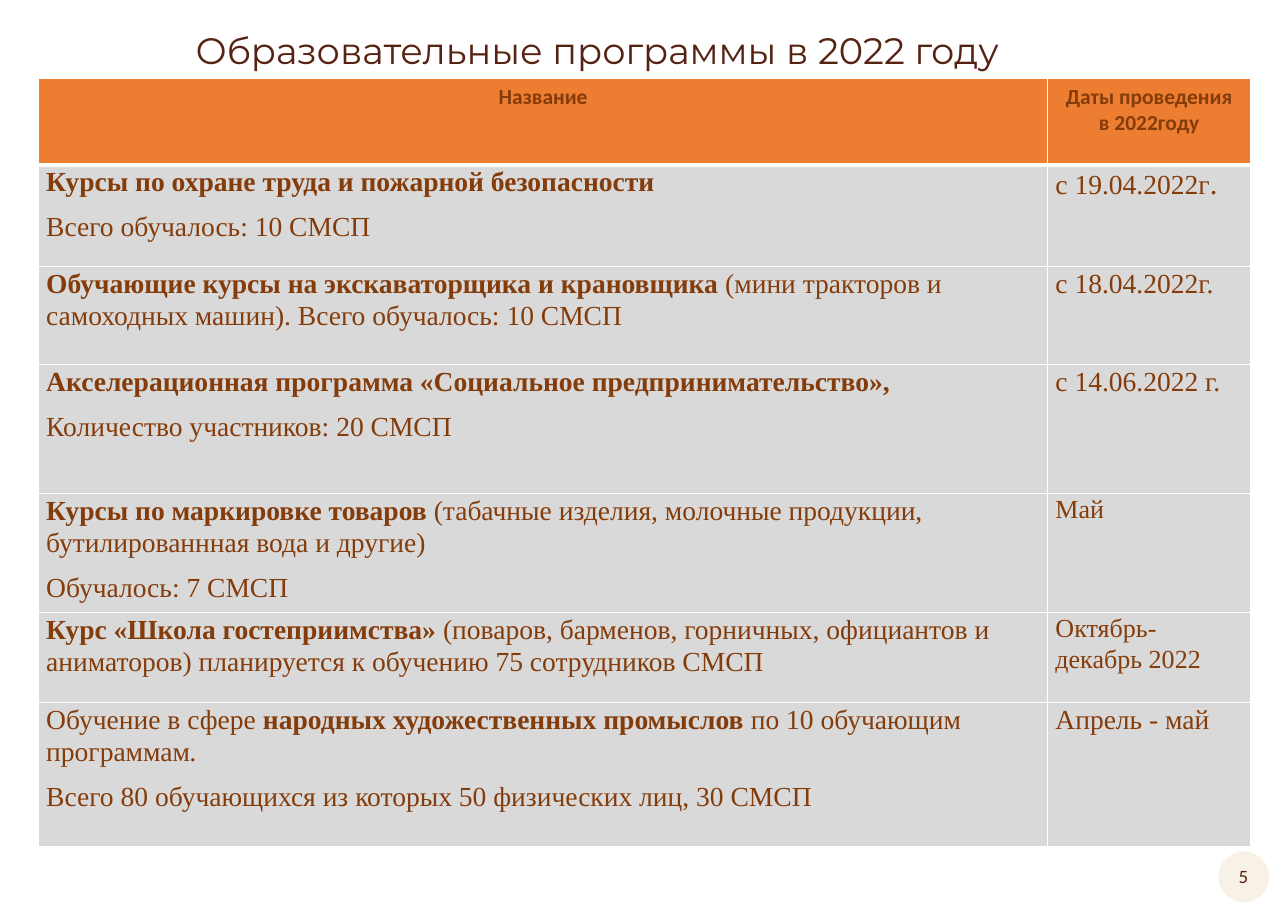
from pptx import Presentation, util as u
from pptx.dml.color import RGBColor
from pptx.enum import shapes, text
from pptx.oxml import parse_xml
from pptx.oxml.ns import nsdecls

WIDE, HIGH = 11.69, 8.27
INK = {"page": "FFFFFF", "head": "ED7D31", "body": "D9D9D9",
       "text": "843C0B", "title": "562212", "badge": "F7F2E5"}
SERIF, SANS = "Times New Roman", "Calibri"
TITLE = "Образовательные программы в 2022 году"
PAGE = "5"
HEAD = [["Название"], ["Даты проведения", "в 2022году"]]
COURSES = [
    ([[("Курсы по охране труда и пожарной безопасности", "b")],
      [("Всего обучалось: 10 СМСП", "")]],
     [("с 19.04.2022г", 18), (".", 20)]),
    ([[("Обучающие курсы на экскаваторщика и крановщика ", "b"),
       ("(мини тракторов и самоходных машин). Всего обучалось: 10 СМСП", "")]],
     [("с 18.04.2022г.", 18)]),
    ([[("Акселерационная программа «Социальное предпринимательство»,", "b")],
      [("Количество участников: 20 СМСП", "")]],
     [("с 14.06.2022 г.", 18)]),
    ([[("Курсы по маркировке товаров ", "b"),
       ("(табачные изделия, молочные продукции, бутилированнная вода и другие)", "")],
      [("Обучалось: 7 СМСП", "")]],
     [("Май", 17)]),
    ([[("Курс «Школа гостеприимства» ", "b"),
       ("(поваров, барменов, горничных, официантов и аниматоров) "
        "планируется к обучению 75 сотрудников СМСП", "")]],
     [("Октябрь-декабрь 2022", 17)]),
    ([[("Обучение в сфере ", ""), ("народных художественных промыслов ", "b"),
       ("по 10 обучающим программам", ""), (".", "i")],
      [("Всего 80 обучающихся из которых 50 физических лиц, 30 СМСП", "")]],
     [("Апрель - май", 18)]),
]
COLS = [9.16, 1.84]
ROWS = [0.79, 0.92, 0.89, 1.17, 1.08, 0.82, 1.31]


def tint(fill, key):
    fill.solid()
    fill.fore_color.rgb = RGBColor.from_string(INK[key])


def add_run(para, words, size, face, key, style=""):
    run = para.add_run()
    run.text = words
    font = run.font
    font.size, font.name = u.Pt(size), face
    font.bold, font.italic = "b" in style, "i" in style
    font.color.rgb = RGBColor.from_string(INK[key])


def add_label(slide, box, words, size, face):
    frame = slide.shapes.add_textbox(*map(u.Inches, box)).text_frame
    frame.word_wrap = True
    frame.auto_size = text.MSO_AUTO_SIZE.SHAPE_TO_FIT_TEXT
    para = frame.paragraphs[0]
    para.alignment = text.PP_ALIGN.CENTER
    add_run(para, words, size, face, "title")


def add_edges(cell, base):
    props = cell._tc.get_or_add_tcPr()
    for spot, side in enumerate("LRTB"):
        width = u.Pt(base if side == "B" else 1)
        props.insert(spot, parse_xml(
            f'<a:ln{side} {nsdecls("a")} w="{width}"><a:solidFill>'
            f'<a:srgbClr val="{INK["page"]}"/></a:solidFill></a:ln{side}>'))


def fill_cell(cell, lines, head):
    tint(cell.fill, "head" if head else "body")
    add_edges(cell, 3 if head else 1)
    if not head:
        cell.margin_left = cell.margin_right = u.Inches(0.07)
        cell.margin_top = cell.margin_bottom = 0
    frame = cell.text_frame
    for spot, runs in enumerate(lines):
        para = frame.add_paragraph() if spot else frame.paragraphs[0]
        if head:
            para.alignment = text.PP_ALIGN.CENTER
        else:
            para.line_spacing, para.space_after = 1.07, u.Pt(8)
        for words, size, style in runs:
            add_run(para, words, size, SANS if head else SERIF, "text", style)


def add_plan(slide):
    grid = slide.shapes.add_table(
        len(ROWS), len(COLS), u.Inches(0.35), u.Inches(0.71),
        u.Inches(sum(COLS)), u.Inches(sum(ROWS))).table
    for col, size in zip(grid.columns, COLS):
        col.width = u.Inches(size)
    for row, size in zip(grid.rows, ROWS):
        row.height = u.Inches(size)
    for spot, lines in enumerate(HEAD):
        fill_cell(grid.cell(0, spot), [[(line, 14, "b")] for line in lines], True)
    for row, (lines, dates) in enumerate(COURSES, 1):
        name = [[(words, 18, style) for words, style in line] for line in lines]
        date = [[(words, size, "") for words, size in dates]]
        fill_cell(grid.cell(row, 0), name, False)
        fill_cell(grid.cell(row, 1), date, False)


def add_badge(slide):
    disc = slide.shapes.add_shape(
        shapes.MSO_SHAPE.OVAL, *map(u.Inches, (11.06, 7.73, 0.46, 0.46)))
    disc.shadow.inherit = False
    tint(disc.fill, "badge")
    disc.line.fill.background()
    add_label(slide, (11.03, 7.8, 0.51, 0.31), PAGE, 12.3, SANS)


def main():
    deck = Presentation()
    deck.slide_width, deck.slide_height = u.Inches(WIDE), u.Inches(HIGH)
    slide = deck.slides.add_slide(deck.slide_layouts[6])
    tint(slide.background.fill, "page")
    add_badge(slide)
    add_plan(slide)
    add_label(slide, (1.23, 0.2, 8.38, 0.5), TITLE, 24, "Montserrat")
    deck.save("out.pptx")


if __name__ == "__main__":
    main()
